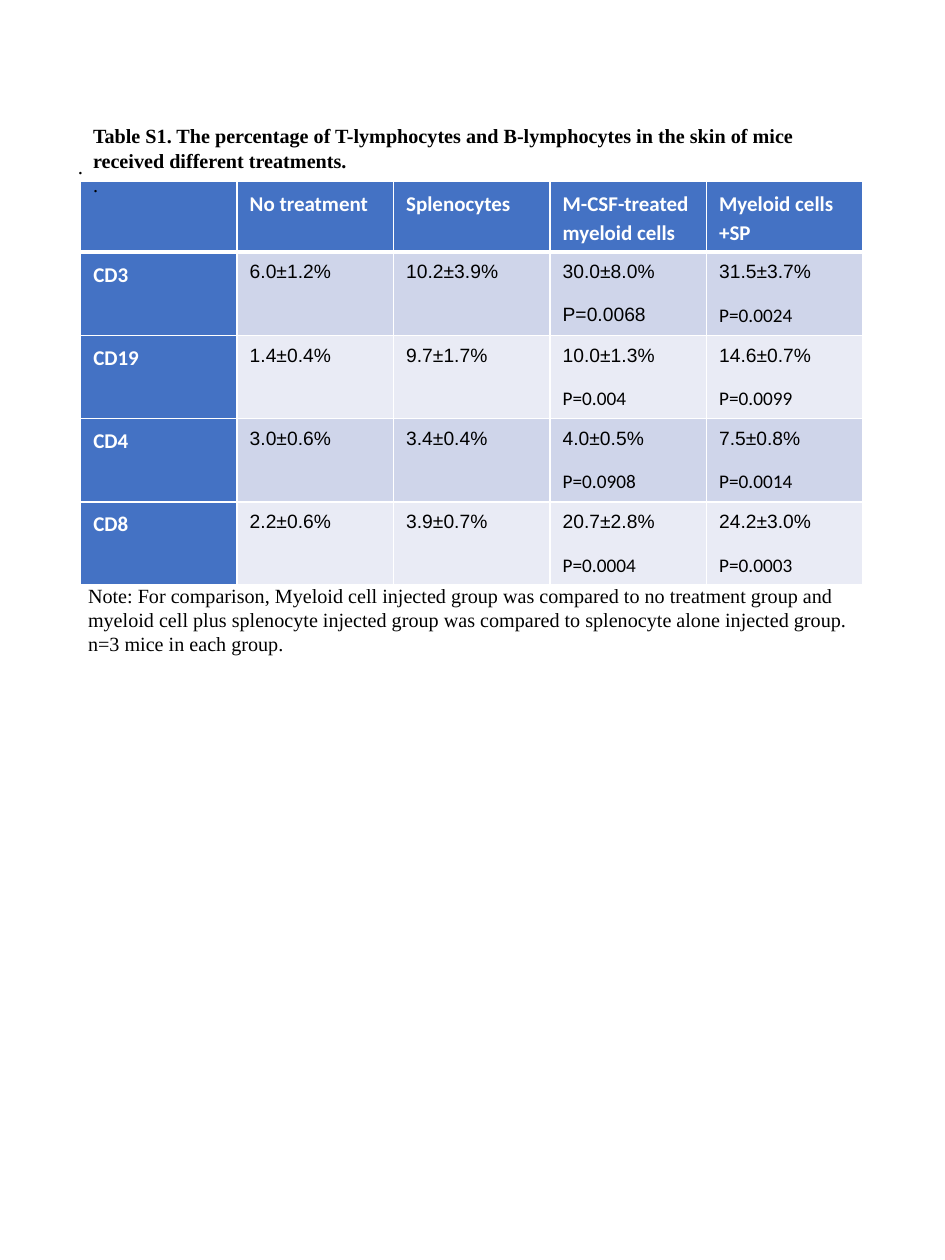
from lxml.etree import SubElement
from pptx import Presentation
from pptx.dml.color import RGBColor
from pptx.enum.text import MSO_ANCHOR, MSO_AUTO_SIZE
from pptx.oxml.ns import qn
from pptx.util import Inches, Pt

# Content
TITLE = ["Table S1. The percentage of T-lymphocytes and B-lymphocytes "
         "in the skin of mice received different treatments."]
NOTE = ["Note: For comparison, Myeloid cell injected group was compared to "
        "no treatment group and myeloid cell plus splenocyte injected group "
        "was compared to splenocyte alone injected group. "
        "n=3 mice in each group."]
DOT = ["."]
HEAD = ["", "No treatment", "Splenocytes", "M-CSF-treated myeloid cells",
        "Myeloid cells +SP"]
# Each value is a mean, with its P value where one was tested
ROWS = [
    ("CD3", ["6.0±1.2%"], ["10.2±3.9%"],
     ["30.0±8.0%", "P=0.0068"], ["31.5±3.7%", "P=0.0024"]),
    ("CD19", ["1.4±0.4%"], ["9.7±1.7%"],
     ["10.0±1.3%", "P=0.004"], ["14.6±0.7%", "P=0.0099"]),
    ("CD4", ["3.0±0.6%"], ["3.4±0.4%"],
     ["4.0±0.5%", "P=0.0908"], ["7.5±0.8%", "P=0.0014"]),
    ("CD8", ["2.2±0.6%"], ["3.9±0.7%"],
     ["20.7±2.8%", "P=0.0004"], ["24.2±3.0%", "P=0.0003"]),
]
PLAIN = {"P=0.0068"}  # P values set in the same face as the means

THEME = {
    "head": "4472C4", "bands": ("CFD5EA", "E9EBF5"),
    "line": "FFFFFF", "light": "FFFFFF", "dark": "000000",
    "serif": "Times New Roman", "sans": "Calibri", "data": "Arial",
    "text": 11.5, "label": 12, "value": 11,
}

# Grid, in inches
WIDE, HIGH = 7.5, 10
LEFT, TOP = 0.64, 1.44
COL, HEAD_H, ROW_H = 1.242, 0.52, 0.645
SPAN = COL * len(HEAD)


def write(frame, lines, size, font, color="dark", bold=False, first=True,
          lead=None, after=None):
    """Add lines as paragraphs of one format."""
    for i, line in enumerate(lines):
        para = (frame.paragraphs[0] if first and i == 0
                else frame.add_paragraph())
        if lead:
            para.line_spacing = lead
        if after is not None:
            para.space_after = Pt(after)
        run = para.add_run()
        run.text = line
        run.font.size = Pt(size)
        run.font.name = font
        run.font.bold = bold
        run.font.color.rgb = RGBColor.from_string(THEME[color])


def box(slide, left, top, wide, high, anchor=MSO_ANCHOR.TOP):
    shape = slide.shapes.add_textbox(
        Inches(left), Inches(top), Inches(wide), Inches(high))
    frame = shape.text_frame
    frame.word_wrap = True
    frame.auto_size = MSO_AUTO_SIZE.SHAPE_TO_FIT_TEXT
    frame.vertical_anchor = anchor
    return frame


def paint(cell, fill, base=1):
    """Fill a cell and rule its four sides."""
    props = cell._tc.get_or_add_tcPr()
    for side, width in (("L", 1), ("R", 1), ("T", 1), ("B", base)):
        line = SubElement(props, qn("a:ln" + side), w=str(Pt(width)))
        solid = SubElement(line, qn("a:solidFill"))
        SubElement(solid, qn("a:srgbClr"), val=THEME["line"])
    cell.fill.solid()
    cell.fill.fore_color.rgb = RGBColor.from_string(fill)


def label(cell, text, base=1):
    paint(cell, THEME["head"], base)
    if text:
        write(cell.text_frame, [text], THEME["label"], THEME["sans"],
              color="light", bold=True, lead=1.15, after=10)


def value(cell, lines, fill):
    paint(cell, fill)
    for i, line in enumerate(lines):
        calm = i == 0 or line in PLAIN
        font = THEME["data"] if calm else THEME["sans"]
        write(cell.text_frame, [line], THEME["value"], font,
              first=i == 0, lead=1.15, after=10)


def grid(slide):
    table = slide.shapes.add_table(
        len(ROWS) + 1, len(HEAD), Inches(LEFT), Inches(TOP), Inches(SPAN),
        Inches(HEAD_H + ROW_H * len(ROWS))).table
    for col in table.columns:
        col.width = Inches(COL)
    for r, row in enumerate(table.rows):
        row.height = Inches(ROW_H if r else HEAD_H)
    for c, text in enumerate(HEAD):
        label(table.cell(0, c), text, base=3)
    for r, (name, *data) in enumerate(ROWS):
        label(table.cell(r + 1, 0), name)
        for c, lines in enumerate(data, 1):
            value(table.cell(r + 1, c), lines, THEME["bands"][r % 2])


def main():
    deck = Presentation()
    deck.slide_width, deck.slide_height = Inches(WIDE), Inches(HIGH)
    slide = deck.slides.add_slide(deck.slide_layouts[6])
    size, serif = THEME["text"], THEME["serif"]

    # Stray full stop behind the table
    write(box(slide, 0.52, 1.17, 6.47, 0.3, MSO_ANCHOR.MIDDLE), DOT,
          THEME["label"], serif)

    grid(slide)

    # Title, then its closing stop
    frame = box(slide, LEFT, 0.93, SPAN, 0.68, MSO_ANCHOR.MIDDLE)
    write(frame, TITLE, size, serif, bold=True)
    write(frame, DOT, size, serif, first=False)

    # Note under the table
    write(box(slide, 0.6, 4.58, 6.31, 0.68), NOTE, size, serif)

    deck.save("out.pptx")


if __name__ == "__main__":
    main()
